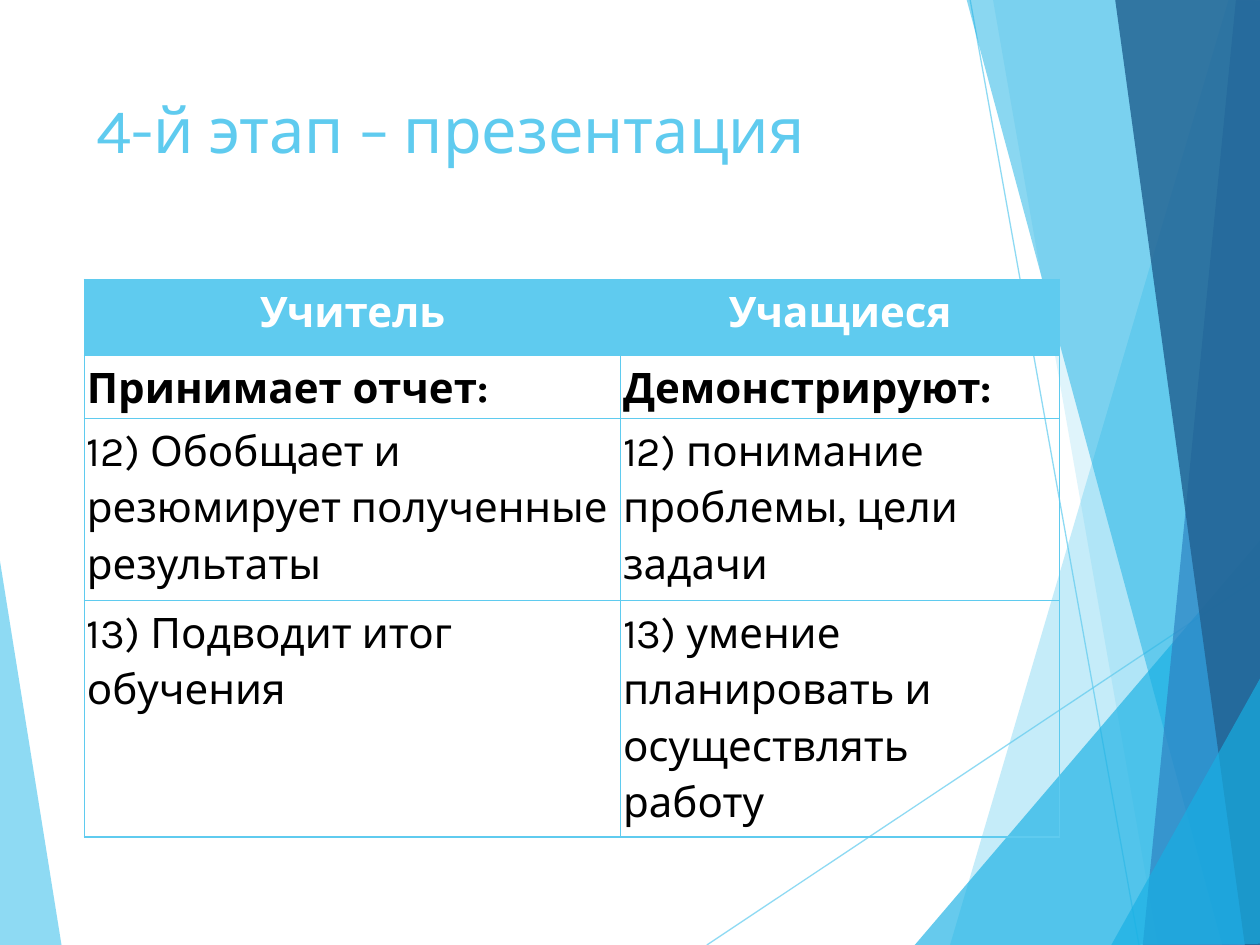
from lxml.etree import SubElement
from pptx import Presentation
from pptx.dml.color import RGBColor
from pptx.enum.shapes import MSO_CONNECTOR
from pptx.enum.text import MSO_ANCHOR, PP_ALIGN
from pptx.oxml.ns import qn
from pptx.util import Inches, Pt

COLORS = {
    "sky": "5FCBEF",
    "azure": "17B0E4",
    "blue": "2E83C3",
    "navy": "226292",
    "white": "FFFFFF",
    "black": "000000",
}
FONT = "Karla"

# Corner points, colour, opacity in percent; back to front
LEFT_FACET = ([(-0.01, 4.39), (0.49, 7.51), (-0.01, 7.5)], "sky", 70)
RIGHT_FACETS = [
    ([(9.75, 0), (7.54, 7.5), (10.02, 7.51), (10.01, 0.01)], "sky", 36),
    ([(7.88, -0.01), (9.19, 7.5), (10.01, 7.5), (10.01, -0.01)], "sky", 20),
    ([(7.26, 7.5), (10, 4.29), (10.01, 7.5)], "azure", 66),
    ([(7.67, -0.01), (9.7, 7.5), (10.01, 7.49), (10.01, -0.01)], "azure", 50),
    ([(9.81, -0.01), (9.07, 7.5), (10.01, 7.5), (10, -0.01)], "blue", 70),
    ([(8.85, -0.01), (9.88, 7.5), (10.02, 7.5), (10, -0.01)], "navy", 82),
    ([(8.82, 7.5), (10.02, 5.35), (10.02, 7.49)], "azure", 66),
]
RAYS = [((5.61, 7.5), (10.01, 4.57)), ((7.7, 0), (9.04, 7.5))]

COLUMN_WIDTHS = [4.25, 3.48]
ROW_HEIGHTS = [0.6, 0.48, 1.44, 1.44]
STAGE_ROWS = [
    ("Учитель", "Учащиеся"),
    ("Принимает отчет:", "Демонстрируют:"),
    ("12) Обобщает и резюмирует полученные результаты",
     "12) понимание проблемы, цели задачи"),
    ("13) Подводит итог обучения",
     "13) умение планировать и осуществлять работу"),
]


def rgb(name):
    return RGBColor.from_string(COLORS[name])


def set_opacity(element, percent):
    for color in element.iter(qn("a:srgbClr")):
        SubElement(color, qn("a:alpha"), val=str(percent * 1000))


def style_font(paragraph, size, color, bold=False):
    font = paragraph.font
    font.name, font.size, font.bold = FONT, Pt(size), bold
    font.color.rgb = rgb(color)


def add_facet(slide, left, top, corners, color, opacity):
    points = [(left + Inches(x), top + Inches(y)) for x, y in corners]
    builder = slide.shapes.build_freeform(*points[0])
    builder.add_line_segments(points[1:], close=True)
    facet = builder.convert_to_shape()
    facet.shadow.inherit = False
    facet.fill.solid()
    facet.fill.fore_color.rgb = rgb(color)
    facet.line.fill.background()
    set_opacity(facet.fill._xPr, opacity)


def add_ray(slide, left, top, start, end):
    ray = slide.shapes.add_connector(
        MSO_CONNECTOR.STRAIGHT,
        left + Inches(start[0]), top + Inches(start[1]),
        left + Inches(end[0]), top + Inches(end[1]))
    ray.line.color.rgb = rgb("sky")
    ray.line.width = Pt(0.75)
    properties = ray._element.spPr
    set_opacity(properties, 70)
    SubElement(properties, qn("a:effectLst"))


def add_backdrop(slide, left, top):
    add_facet(slide, left, top, *LEFT_FACET)
    for start, end in RAYS:
        add_ray(slide, left, top, start, end)
    for facet in RIGHT_FACETS:
        add_facet(slide, left, top, *facet)


def add_title(slide, left, top, width, height):
    frame = slide.shapes.add_textbox(left, top, width, height).text_frame
    frame.word_wrap = True
    frame.vertical_anchor = MSO_ANCHOR.TOP
    heading = frame.paragraphs[0]
    heading.text = "4-й этап – презентация"
    style_font(heading, 36, "sky")


def add_borders(cell):
    properties = cell._tc.get_or_add_tcPr()
    for side in ("lnL", "lnR", "lnT", "lnB"):
        border = SubElement(properties, qn(f"a:{side}"), w=str(Pt(1)))
        fill = SubElement(border, qn("a:solidFill"))
        SubElement(fill, qn("a:srgbClr"), val=COLORS["sky"])


def fill_cell(cell, text, row):
    is_header = row == 0
    cell.margin_left = cell.margin_right = Inches(0.02)
    cell.margin_top = cell.margin_bottom = Inches(0.02)
    add_borders(cell)
    if is_header:
        cell.fill.solid()
        cell.fill.fore_color.rgb = rgb("sky")
    else:
        cell.fill.background()
    entry = cell.text_frame.paragraphs[0]
    entry.text = text
    entry.line_spacing = 1.15
    entry.alignment = PP_ALIGN.CENTER if is_header else PP_ALIGN.LEFT
    style_font(entry, 24, "white" if is_header else "black", bold=row < 2)


def add_stage_table(slide, left, top, width, height):
    table = slide.shapes.add_table(
        len(ROW_HEIGHTS), len(COLUMN_WIDTHS), left, top, width, height).table
    table.first_row = table.horz_banding = False
    for column, share in zip(table.columns, COLUMN_WIDTHS):
        column.width = int(width * share / sum(COLUMN_WIDTHS))
    for row, share in zip(table.rows, ROW_HEIGHTS):
        row.height = int(height * share / sum(ROW_HEIGHTS))
    for r, texts in enumerate(STAGE_ROWS):
        for c, text in enumerate(texts):
            fill_cell(table.cell(r, c), text, r)


def main():
    deck = Presentation()
    deck.slide_width, deck.slide_height = Inches(10), Inches(7.5)
    slide = deck.slides.add_slide(deck.slide_layouts[6])
    add_backdrop(slide, Inches(0), Inches(0))
    add_title(slide, Inches(0.67), Inches(0.67), Inches(6.94), Inches(1.44))
    add_stage_table(slide, Inches(0.67), Inches(2.22), Inches(7.74), Inches(3.97))
    deck.save("out.pptx")


if __name__ == "__main__":
    main()
